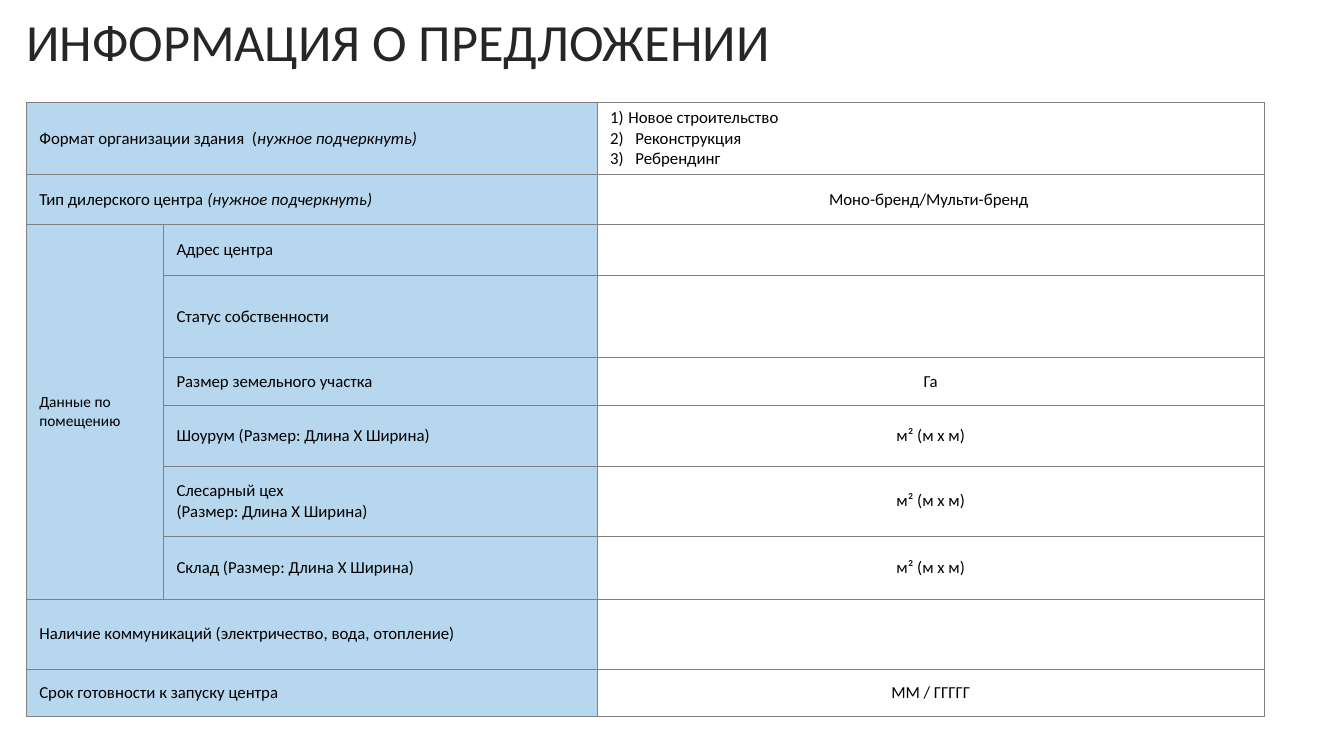
from lxml import etree
from pptx import Presentation
from pptx.dml.color import RGBColor
from pptx.enum import text as t
from pptx.oxml import ns, parse_xml
from pptx.util import Pt

INK = RGBColor(0x26, 0x26, 0x26)
BLACK = RGBColor(0, 0, 0)
BLUE = RGBColor(0x49, 0x9B, 0xD5)
GREY = RGBColor(0x80, 0x80, 0x80)
FONT = "Calibri"


def add_run(para, words, size, color=BLACK, italic=False):
    run = para.add_run()
    run.text = words
    font = run.font
    font.name, font.size, font.italic = FONT, Pt(size), italic
    font.color.rgb = color


def add_edges(cell):
    """Draw a thin grey line on all four sides of a cell."""
    props = cell._tc.get_or_add_tcPr()
    for pos, side in enumerate("LRTB"):
        props.insert(pos, parse_xml(
            f'<a:ln{side} {ns.nsdecls("a")} w="{Pt(0.75)}"><a:solidFill>'
            f'<a:srgbClr val="{GREY}"/></a:solidFill></a:ln{side}>'))


prs = Presentation()
prs.slide_width, prs.slide_height = Pt(960), Pt(540)
slide = prs.slides.add_slide(prs.slide_layouts[5])

title = slide.shapes.title
title.left, title.top, title.width, title.height = Pt(11.5), Pt(0), Pt(877), Pt(44.6)
frame = title.text_frame
frame.auto_size = t.MSO_AUTO_SIZE.NONE
frame.vertical_anchor = t.MSO_ANCHOR.TOP
frame.margin_top = Pt(6.6)
para = frame.paragraphs[0]
para.alignment = t.PP_ALIGN.LEFT
add_run(para, "ИНФОРМАЦИЯ О ПРЕДЛОЖЕНИИ", 37.3, INK)

# Row height, label, italic hint, value
AREA = "м² (м x м)"
rows = [
    (51.4, "Формат организации здания  (", "нужное подчеркнуть)", ""),
    (36, "Тип дилерского центра ", "(нужное подчеркнуть)", "Моно-бренд/Мульти-бренд "),
    (36, "Адрес центра", "", ""),
    (59, "Статус собственности", "", ""),
    (34, "Размер земельного участка", "", "Га"),
    (43.5, "Шоурум (Размер: Длина Х Ширина)", "", AREA),
    (50, "Слесарный цех\n(Размер: Длина Х Ширина)", "", AREA),
    (45, "Склад (Размер: Длина Х Ширина)", "", AREA),
    (50, "Наличие коммуникаций (электричество, вода, отопление)", "", ""),
    (33.5, "Срок готовности к запуску центра", "", "ММ / ГГГГГ"),
]
cols = [98, 309.8, 476.6]
first, last = 2, 7  # rows about the premises

table = slide.shapes.add_table(len(rows), len(cols), Pt(18.7), Pt(73.2),
                               Pt(sum(cols)), Pt(sum(r[0] for r in rows))).table
table.first_row = table.horz_banding = False
for col, width in zip(table.columns, cols):
    col.width = Pt(width)

for row in range(len(rows)):
    for col in range(len(cols)):
        cell = table.cell(row, col)
        cell.vertical_anchor = t.MSO_ANCHOR.MIDDLE
        cell.margin_left = cell.margin_right = Pt(9.4)
        cell.margin_top = cell.margin_bottom = Pt(3.6)
        if col < 2:
            cell.fill.solid()
            cell.fill.fore_color.rgb = BLUE
            tint = cell._tc.tcPr.find(".//" + ns.qn("a:srgbClr"))
            etree.SubElement(tint, ns.qn("a:alpha"), val="40000")
        else:
            cell.fill.background()
        add_edges(cell)

table.cell(first, 0).merge(table.cell(last, 0))
add_run(table.cell(first, 0).text_frame.paragraphs[0], "Данные по помещению", 11)

for row, (height, label, hint, value) in enumerate(rows):
    table.rows[row].height = Pt(height)
    inner = first <= row <= last
    if not inner:
        table.cell(row, 0).merge(table.cell(row, 1))
    para = table.cell(row, int(inner)).text_frame.paragraphs[0]
    for pos, line in enumerate(label.split("\n")):
        if pos:
            para.add_line_break()
        add_run(para, line, 12)
    if hint:
        add_run(para, hint, 12, italic=True)
    if value:
        para = table.cell(row, 2).text_frame.paragraphs[0]
        para.alignment = t.PP_ALIGN.CENTER
        add_run(para, value, 12)

# Numbered choices for the building format
frame = table.cell(0, 2).text_frame
choices = [("Новое строительство", 13), ("Реконструкция", 18), ("Ребрендинг", 18)]
for num, (words, indent) in enumerate(choices, 1):
    para = frame.paragraphs[0] if num == 1 else frame.add_paragraph()
    add_run(para, words, 12)
    props = para._p.get_or_add_pPr()
    props.set("marL", str(Pt(indent)))
    props.set("indent", str(-Pt(indent)))
    etree.SubElement(props, ns.qn("a:buFont"), typeface=FONT)
    etree.SubElement(props, ns.qn("a:buAutoNum"), type="arabicParenR", startAt=str(num))

prs.save("out.pptx")
